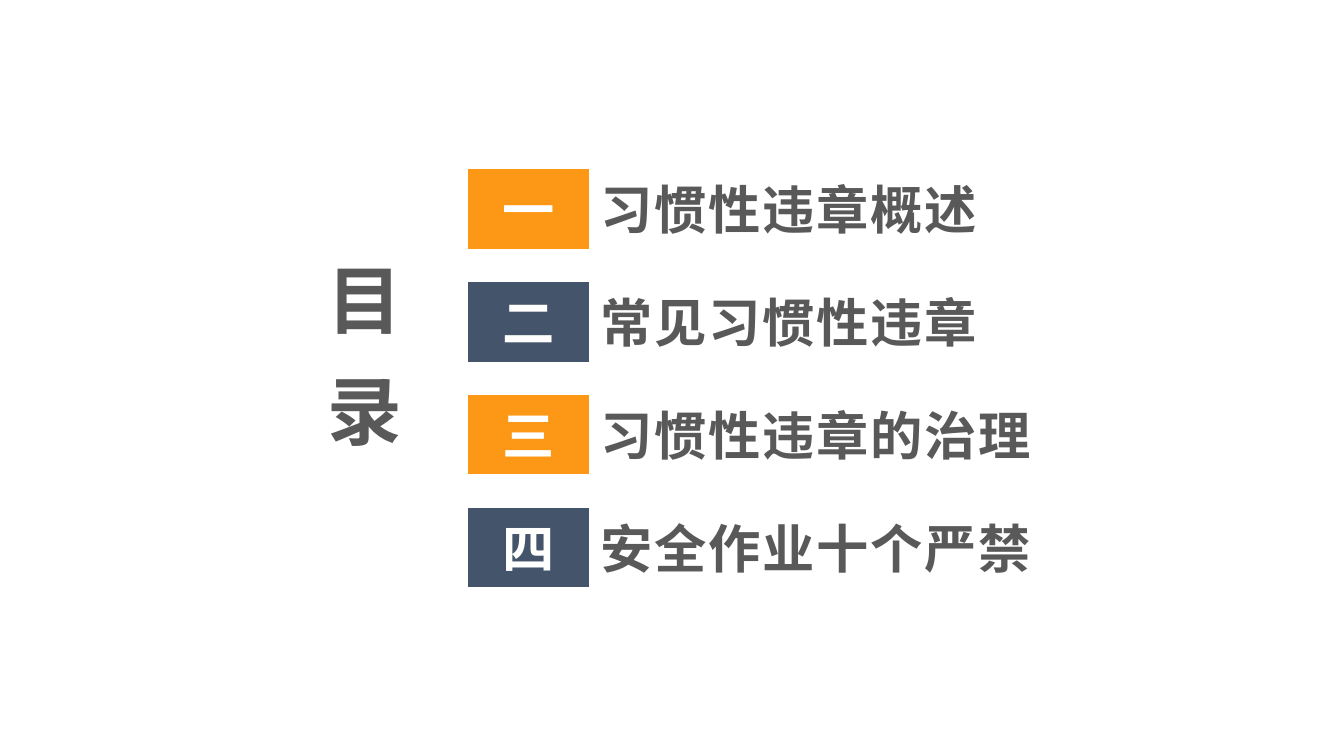
from dataclasses import dataclass

from lxml import etree
from pptx import Presentation
from pptx.dml.color import RGBColor
from pptx.enum import shapes, text
from pptx.oxml import ns
from pptx.util import Inches, Pt


@dataclass(frozen=True)
class Theme:
    font: str = "Noto Sans CJK SC"
    ink: str = "595959"
    light: str = "FFFFFF"
    badges: tuple = ("FD9816", "44546A")
    heading_size: int = 40
    entry_size: int = 28


THEME = Theme()

CHAPTERS = [
    ("一", "习惯性违章概述"),
    ("二", "常见习惯性违章"),
    ("三", "习惯性违章的治理"),
    ("四", "安全作业十个严禁"),
]
SLIDE_WIDTH = 10
FIRST_TOP, ROW_PITCH = 1.26, 0.84
TITLE_LEFT, TITLE_HEIGHT = 4.37, 0.57
BADGE_LEFT, BADGE_WIDTH, BADGE_HEIGHT = 3.48, 0.9, 0.59


def format_run(run, size, color, spacing=0):
    """Bold type in the theme font, with letter spacing in points."""
    run.font.name = THEME.font
    run.font.size = Pt(size)
    run.font.bold = True
    run.font.color.rgb = RGBColor.from_string(color)
    properties = run.font._element
    etree.SubElement(properties, ns.qn("a:ea")).set("typeface", THEME.font)
    if spacing:
        properties.set("spc", str(spacing * 100))


def add_heading(slide):
    heading = slide.shapes.add_textbox(
        Inches(2.21), Inches(1.86), Inches(0.87), Inches(1.9))
    frame = heading.text_frame
    frame.word_wrap = True
    frame.auto_size = text.MSO_AUTO_SIZE.SHAPE_TO_FIT_TEXT
    frame._txBody.bodyPr.set("vert", "eaVert")
    line = frame.paragraphs[0]
    line.alignment = text.PP_ALIGN.CENTER
    # Letter spacing widens the gap after the first character only
    for characters, spacing in (("目 ", 5), ("录", 0)):
        run = line.add_run()
        run.text = characters
        format_run(run, THEME.heading_size, THEME.ink, spacing)


def add_badge(slide, top, numeral, color):
    badge = slide.shapes.add_shape(
        shapes.MSO_SHAPE.PARALLELOGRAM, Inches(BADGE_LEFT), Inches(top),
        Inches(BADGE_WIDTH), Inches(BADGE_HEIGHT))
    badge.adjustments[0] = 0
    badge.shadow.inherit = False
    badge.fill.solid()
    badge.fill.fore_color.rgb = RGBColor.from_string(color)
    badge.line.fill.background()
    frame = badge.text_frame
    frame.text = numeral
    frame.vertical_anchor = text.MSO_ANCHOR.MIDDLE
    frame.paragraphs[0].alignment = text.PP_ALIGN.CENTER
    format_run(frame.paragraphs[0].runs[0], THEME.entry_size, THEME.light)


def add_chapter_title(slide, top, title):
    width = 0.4 * len(title) + 0.22
    entry = slide.shapes.add_textbox(
        Inches(TITLE_LEFT), Inches(top), Inches(width), Inches(TITLE_HEIGHT))
    frame = entry.text_frame
    frame.text = title
    frame.word_wrap = False
    frame.auto_size = text.MSO_AUTO_SIZE.SHAPE_TO_FIT_TEXT
    format_run(frame.paragraphs[0].runs[0], THEME.entry_size, THEME.ink, 1)


def main():
    # Widescreen page, 16 to 9
    deck = Presentation()
    deck.slide_width = Inches(SLIDE_WIDTH)
    deck.slide_height = Inches(SLIDE_WIDTH * 9 / 16)
    slide = deck.slides.add_slide(deck.slide_layouts[6])

    # Vertical heading
    add_heading(slide)

    # Numbered chapters in alternating colours
    for row, (numeral, title) in enumerate(CHAPTERS):
        top = FIRST_TOP + row * ROW_PITCH
        add_badge(slide, top, numeral, THEME.badges[row % 2])
        add_chapter_title(slide, top + 0.01, title)

    deck.save("out.pptx")


if __name__ == "__main__":
    main()
